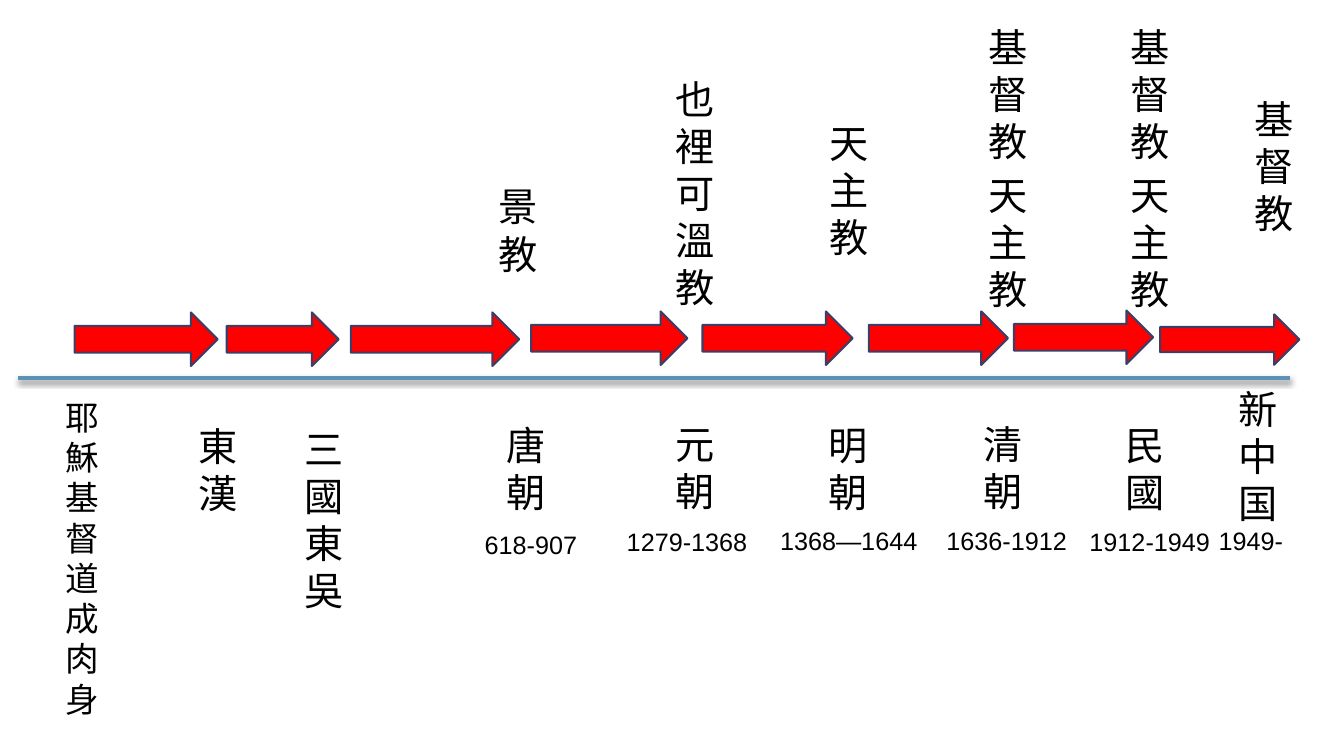
import pptx
import pptx.util
import pptx.dml.color
import pptx.enum.shapes
import pptx.oxml
import pptx.oxml.ns
from pptx.util import Pt

CJK, LATIN = "Noto Sans CJK SC", "Arial"
NAMESPACE = pptx.oxml.ns.nsdecls("a")
LINE_SHADOW = (
    f'<a:effectLst {NAMESPACE}><a:outerShdw blurRad="50800" dist="25400" dir="5400000" '
    'rotWithShape="0"><a:srgbClr val="000000"><a:alpha val="45000"/></a:srgbClr>'
    '</a:outerShdw></a:effectLst>'
)

# Offsets within each region: left, top, width (and height for arrows).
ARROWS = [
    (53.3, 1.4, 102.2, 38.2), (162, 1.4, 79.9, 38.2), (250.6, 1.4, 120.2, 38.2),
    (379.4, 0.7, 111.6, 38.2), (501.8, 0.7, 107.3, 38.2), (620.6, 0.7, 99.4, 38.2),
    (724.3, 0, 99.4, 38.2), (828.7, 2.8, 99.4, 36),
]
FAITHS = [
    (349.2, 113.8, 37.4, "景教"), (475.2, 36.7, 37.4, "也裡可溫教"),
    (585.4, 68.4, 37.4, "天主教"), (699.1, 0, 37.4, "基督教\n天主教"),
    (800.6, 0, 37.4, "基督教\n天主教"), (889.2, 51.1, 37.4, "基督教"),
]
ERAS = [
    (134.6, 26.6, 37.4, "東漢"), (210.2, 28.8, 31.7, "三國東吳"),
    (355, 25.9, 31.7, "唐朝"), (475.2, 25.2, 31.7, "元朝"),
    (584.6, 25.9, 31.7, "明朝"), (695.5, 25.2, 31.7, "清朝"),
    (797, 25.9, 31.7, "民國"), (877.7, 0, 31.7, "新中国"),
]
BIRTH = [(39.6, 7.9, 37.4, "耶穌基督道成肉身")]
YEARS = [
    (339.1, 2.9, 82.1, "618-907"), (440.6, 0.7, 102.2, "1279-1368"),
    (550.1, 0, 126.7, "1368―1644"), (668.9, 0, 116.6, "1636-1912"),
    (771.1, 0.7, 116.6, "1912-1949"), (863.3, 0, 116.6, "1949-"),
]


def colour(code):
    return pptx.dml.color.RGBColor.from_string(code)


def apply_format(target, values):
    for name, value in values.items():
        setattr(target, name, value)


def add_label(page, left, top, width, height, text, font_name, size, frame_format, para_format):
    box = page.shapes.add_textbox(Pt(left), Pt(top), Pt(width), Pt(height))
    frame = box.text_frame
    apply_format(frame, {"word_wrap": True, **frame_format})
    frame.text = text
    for index, para in enumerate(frame.paragraphs):
        apply_format(para, para_format)
        para.space_before = Pt(5 if index else 0)
        span = para.runs[0]
        span.font.color.rgb = colour("000000")
        apply_format(span.font, {"name": font_name, "size": Pt(size)})
        span.font._element.append(
            pptx.oxml.parse_xml(f'<a:ea {NAMESPACE} typeface="{font_name}"/>'))


def draw_columns(page, left, top, columns, size=28):
    """Stack characters downwards by wrapping them in narrow boxes."""
    frame_format = {"margin_left": Pt(7.2), "margin_right": Pt(1.44),
                    "margin_top": Pt(6), "margin_bottom": Pt(3.6)}
    para_format = {"line_spacing": Pt(size * 1.2)}
    for x, y, width, text in columns:
        add_label(page, left + x, top + y, width, 200, text, CJK, size,
                  frame_format, para_format)


def draw_years(page, left, top):
    for x, y, width, text in YEARS:
        add_label(page, left + x, top + y, width, 28.8, text, LATIN, 18, {}, {})


def draw_arrows(page, left, top):
    for x, y, width, height in ARROWS:
        arrow = page.shapes.add_shape(
            pptx.enum.shapes.MSO_SHAPE.RIGHT_ARROW,
            Pt(left + x), Pt(top + y), Pt(width), Pt(height))
        arrow.shadow.inherit = False
        arrow.fill.solid()
        arrow.fill.fore_color.rgb = colour("FF0000")
        arrow.line.color.rgb = colour("3D3E66")
        arrow.line.width = Pt(1.5)


def draw_axis(page, left, top, width):
    axis = page.shapes.add_connector(
        pptx.enum.shapes.MSO_CONNECTOR.STRAIGHT,
        Pt(left), Pt(top), Pt(left + width), Pt(top))
    axis.line.color.rgb = colour("5C92B5")
    axis.line.width = Pt(2.5)
    axis._element.spPr.append(pptx.oxml.parse_xml(LINE_SHADOW))


def main():
    deck = pptx.Presentation()
    apply_format(deck, {"slide_width": Pt(960), "slide_height": Pt(540)})
    page = deck.slides.add_slide(deck.slide_layouts[6])
    draw_axis(page, 13, 270, 908.6)
    draw_columns(page, 0, 269.3, BIRTH, size=24)
    draw_columns(page, 0, 10.8, FAITHS)
    draw_columns(page, 0, 269.3, ERAS)
    draw_arrows(page, 0, 221.8)
    draw_years(page, 0, 371.5)
    deck.save("out.pptx")


if __name__ == "__main__":
    main()
